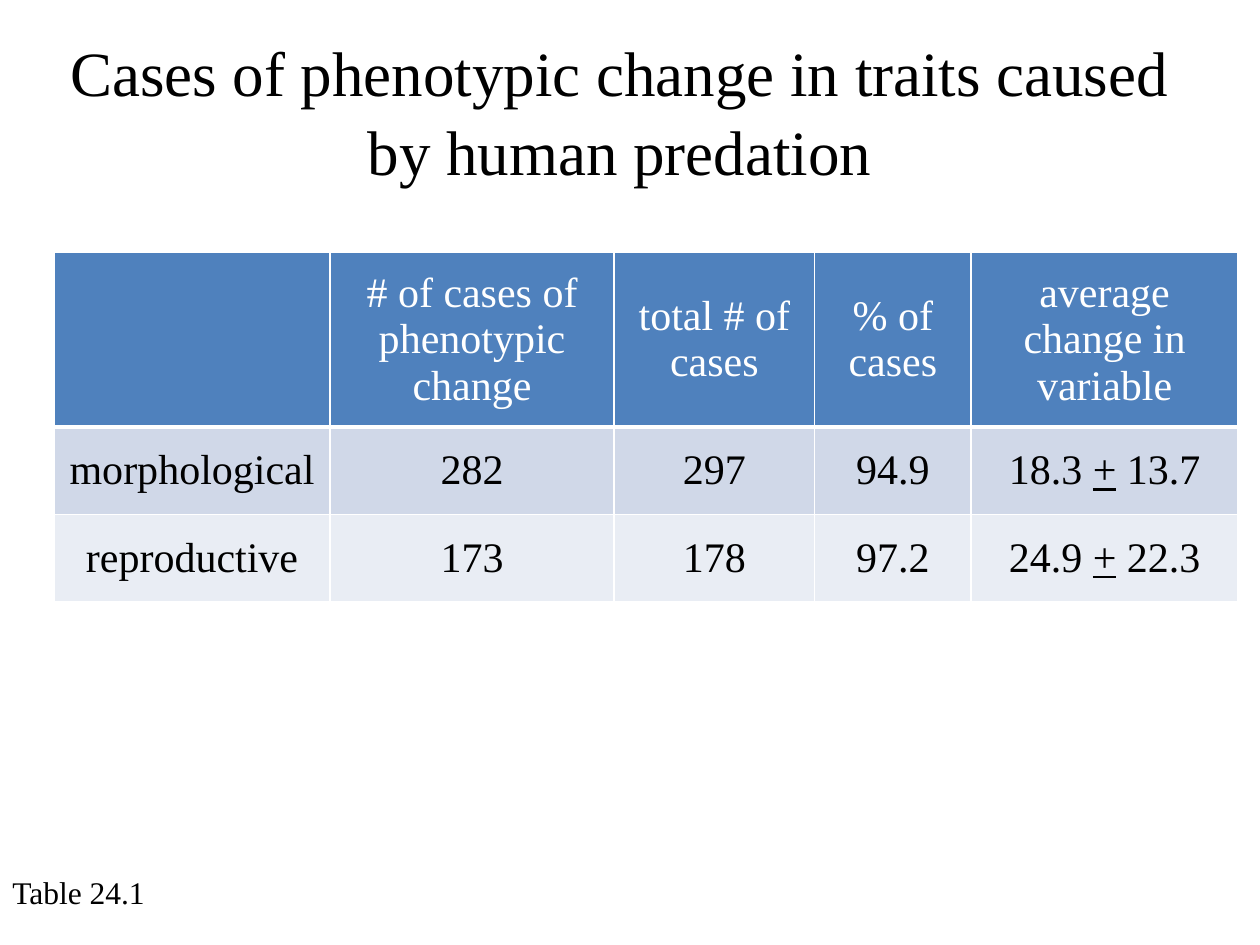
from pptx import Presentation
from pptx.dml.color import RGBColor
from pptx.enum.text import MSO_ANCHOR as Anchor, MSO_AUTO_SIZE as AutoSize, PP_ALIGN as Align
from pptx.oxml.ns import qn
from pptx.util import Pt
from lxml.etree import SubElement

COLORS = {"text": "000000", "white": "FFFFFF", "header": "4F81BD",
          "band1": "D0D8E8", "band2": "E9EDF4"}
FONT = "Times New Roman"
HEADINGS = ["", "# of cases of phenotypic change", "total # of cases",
            "% of cases", "average change in variable"]
ROWS = [["morphological", "282", "297", "94.9", "18.3 + 13.7"],
        ["reproductive", "173", "178", "97.2", "24.9 + 22.3"]]
COL_WIDTHS = [157.5, 162.5, 114.5, 89.5, 152.5]
ROW_HEIGHTS = [100, 50, 50]


def color(name):
    return RGBColor.from_string(COLORS[name])


def write(tf, text, size=24, ink="text", align=Align.LEFT, spacing=None, underline=""):
    p = tf.paragraphs[0]
    p.alignment = align
    if spacing:
        p.line_spacing = spacing
    parts = text.partition(underline) if underline else (text,)
    for part in filter(None, parts):
        r = p.add_run()
        r.text = part
        r.font.name = FONT
        r.font.size = Pt(size)
        r.font.color.rgb = color(ink)
        if part == underline:
            r.font.underline = True


class SlideBuilder:
    def __init__(self, slide):
        self.s = slide

    def text(self, text, x, y, w, h, wrap=True, **fmt):
        tf = self.s.shapes.add_textbox(Pt(x), Pt(y), Pt(w), Pt(h)).text_frame
        tf.word_wrap = wrap
        tf.auto_size = AutoSize.SHAPE_TO_FIT_TEXT
        write(tf, text, **fmt)

    def border(self, cell, side, width):
        ln = SubElement(cell._tc.get_or_add_tcPr(), qn(f"a:{side}"), w=str(Pt(width)))
        fill = SubElement(ln, qn("a:solidFill"))
        SubElement(fill, qn("a:srgbClr"), val=COLORS["white"])

    def cell(self, cell, text, fill, ink, bottom, top):
        cell.vertical_anchor = Anchor.MIDDLE
        cell.margin_left = cell.margin_right = Pt(5)
        cell.margin_top = cell.margin_bottom = 0
        for side, width in (("lnL", 1), ("lnR", 1), ("lnT", top), ("lnB", bottom)):
            self.border(cell, side, width)
        cell.fill.solid()
        cell.fill.fore_color.rgb = color(fill)
        write(cell.text_frame, text, ink=ink, align=Align.CENTER, underline="+")

    def table(self, rows, x, y, widths, heights):
        table = self.s.shapes.add_table(len(rows), len(widths), Pt(x), Pt(y),
                                        Pt(sum(widths)), Pt(sum(heights))).table
        for col, width in zip(table.columns, widths):
            col.width = Pt(width)
        for i, (row, height) in enumerate(zip(rows, heights)):
            table.rows[i].height = Pt(height)
            fill = ("header", "band1", "band2")[i]
            ink = "text" if i else "white"
            for j, text in enumerate(row):
                self.cell(table.cell(i, j), text, fill, ink,
                          bottom=1 if i else 3, top=3 if i == 1 else 1)


def main():
    prs = Presentation()
    prs.slide_width, prs.slide_height = Pt(720), Pt(540)
    s = SlideBuilder(prs.slides.add_slide(prs.slide_layouts[6]))
    s.text("Cases of phenotypic change in traits caused by human predation",
           14.5, 13.5, 679, 94.5, size=36, align=Align.CENTER, spacing=1.05)
    s.text("Table 24.1", 0, 495.5, 96, 29, wrap=False, size=18)
    s.table([HEADINGS] + ROWS, 31, 144, COL_WIDTHS, ROW_HEIGHTS)
    prs.save("out.pptx")


if __name__ == "__main__":
    main()
